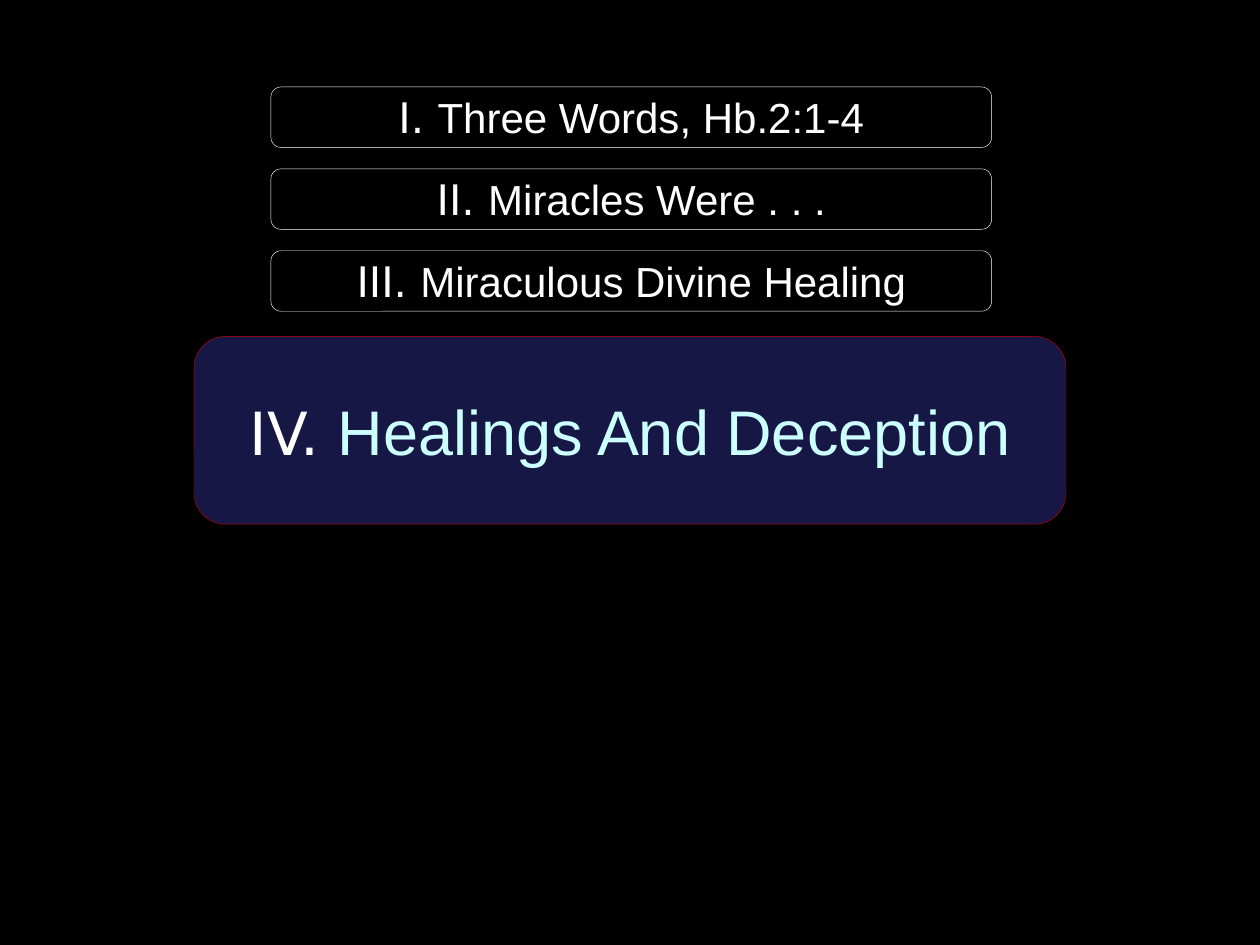
from pptx import Presentation
from pptx.dml.color import RGBColor
from pptx.enum.shapes import MSO_SHAPE
from pptx.enum.text import MSO_ANCHOR, PP_ALIGN
from pptx.util import Inches, Pt

SLIDE_WIDTH, SLIDE_HEIGHT = 10, 7.5
COLORS = {
    "black": "000000",
    "white": "FFFFFF",
    "navy": "171745",
    "red": "C00000",
    "ice": "CCFFFF",
}
POINT_LEFT, POINT_TOP, POINT_PITCH = 2.15, 0.69, 0.65
POINT_SIZE = (5.72, 0.48)
POINTS = [
    ("I. ", "Three Words, Hb.2:1-4"),
    ("II. ", "Miracles Were . . ."),
    ("III. ", "Miraculous Divine Healing"),
]


def color(name):
    return RGBColor.from_string(COLORS[name])


def add_panel(slide, left, top, size, fill, line):
    panel = slide.shapes.add_shape(
        MSO_SHAPE.ROUNDED_RECTANGLE, *map(Inches, (left, top, *size)))
    panel.shadow.inherit = False
    panel.fill.solid()
    panel.fill.fore_color.rgb = color(fill)
    panel.line.color.rgb = color(line)
    panel.line.width = Pt(0.25)
    return panel


def write_heading(panel, *parts):
    """Write centred runs, each part being (text, font, points, colour)."""
    frame = panel.text_frame
    frame.word_wrap = True
    frame.vertical_anchor = MSO_ANCHOR.MIDDLE
    heading = frame.paragraphs[0]
    heading.alignment = PP_ALIGN.CENTER
    for text, font, points, ink in parts:
        run = heading.add_run()
        run.text = text
        run.font.name = font
        run.font.size = Pt(points)
        run.font.color.rgb = color(ink)


def add_point(slide, row, numeral, title):
    panel = add_panel(slide, POINT_LEFT, POINT_TOP + row * POINT_PITCH,
                      POINT_SIZE, "black", "white")
    write_heading(panel, (numeral, "DejaVu Sans", 24, "white"),
                  (title, "Arial", 24, "white"))


def add_current_point(slide, numeral, title):
    width, height = 6.92, 1.49
    panel = add_panel(slide, (SLIDE_WIDTH - width) / 2, 2.67,
                      (width, height), "navy", "red")
    write_heading(panel, (numeral, "DejaVu Sans", 34, "white"),
                  (title, "Arial", 36, "ice"))


def main():
    deck = Presentation()
    deck.slide_width = Inches(SLIDE_WIDTH)
    deck.slide_height = Inches(SLIDE_HEIGHT)
    slide = deck.slides.add_slide(deck.slide_layouts[6])
    slide.background.fill.solid()
    slide.background.fill.fore_color.rgb = color("black")

    for row, (numeral, title) in enumerate(POINTS):
        add_point(slide, row, numeral, title)
    add_current_point(slide, "IV. ", "Healings And Deception")

    deck.save("out.pptx")


if __name__ == "__main__":
    main()
